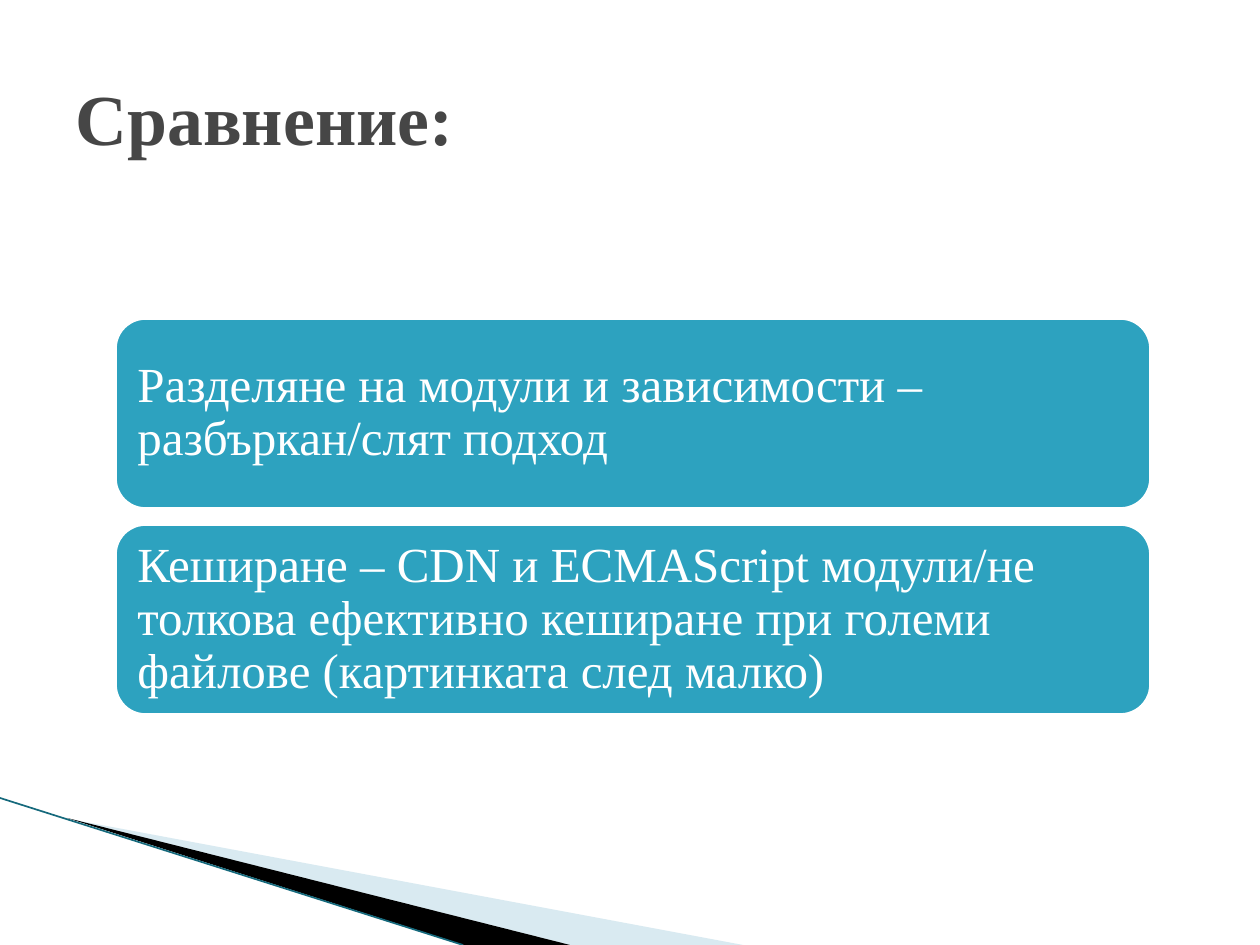
from dataclasses import dataclass

from lxml.etree import SubElement
from pptx import Presentation
from pptx.dml.color import RGBColor
from pptx.enum.shapes import MSO_CONNECTOR as Connector, MSO_SHAPE as Shape
from pptx.enum.text import MSO_ANCHOR as Anchor, MSO_AUTO_SIZE as AutoSize, PP_ALIGN as Align
from pptx.oxml.ns import qn
from pptx.util import Emu, Pt

SCALE = 914400 / 126


@dataclass(frozen=True)
class Theme:
    font: str = "Times New Roman"
    title_size: float = 41
    card_size: float = 28
    title: str = "464646"
    card: str = "2DA2BF"
    white: str = "FFFFFF"
    pale: str = "A0CBDC"
    black: str = "000000"
    edge: str = "15697C"


THEME = Theme()
CARDS = (
    "Разделяне на модули и зависимости – разбъркан/слят подход",
    "Кеширане – CDN и ECMAScript модули/не толкова ефективно кеширане "
    "при големи файлове (картинката след малко)",
)


def px(length):
    return Emu(round(length * SCALE))


def color(code):
    return RGBColor.from_string(code)


def write(frame, text, size, code, bold=False):
    frame.word_wrap = True
    frame.auto_size = AutoSize.NONE
    frame.vertical_anchor = Anchor.MIDDLE
    para = frame.paragraphs[0]
    para.alignment = Align.LEFT
    span = para.add_run()
    span.text = text
    span.font.name = THEME.font
    span.font.size = Pt(size)
    span.font.bold = bold
    span.font.color.rgb = color(code)
    return para


def set_title(page, text):
    box = page.shapes.title
    box.left, box.top, box.width, box.height = map(px, (63, 38, 1134, 157))
    write(box.text_frame, text, THEME.title_size, THEME.title, bold=True)


def add_card(page, text, top):
    box = page.shapes.add_shape(Shape.ROUNDED_RECTANGLE, px(113), px(top), px(1040), px(195))
    box.shadow.inherit = False
    box.fill.solid()
    box.fill.fore_color.rgb = color(THEME.card)
    box.line.color.rgb = color(THEME.white)
    box.line.width = Pt(4.33)
    frame = box.text_frame
    frame.margin_left = frame.margin_right = px(15)
    frame.margin_top = frame.margin_bottom = px(15)
    para = write(frame, text, THEME.card_size, THEME.white)
    para.line_spacing = 0.9


def add_wedge(page, points, code, opacity=100):
    builder = page.shapes.build_freeform(*points[0], scale=SCALE)
    builder.add_line_segments(points[1:], close=True)
    wedge = builder.convert_to_shape()
    wedge.shadow.inherit = False
    wedge.line.fill.background()
    wedge.fill.solid()
    wedge.fill.fore_color.rgb = color(code)
    if opacity < 100:
        fill_color = wedge.fill._xPr.find(qn("a:solidFill"))[0]
        SubElement(fill_color, qn("a:alpha"), val=str(opacity * 1000))


def add_edge(page, start, end):
    edge = page.shapes.add_connector(Connector.STRAIGHT, *map(px, start + end))
    edge.line.color.rgb = color(THEME.edge)
    edge.line.width = Pt(0.95)
    SubElement(edge._element.spPr, qn("a:effectLst"))


def main():
    deck = Presentation()
    deck.slide_width, deck.slide_height = px(1260), px(945)
    page = deck.slides.add_slide(deck.slide_layouts[5])
    add_wedge(page, ((69, 819), (743, 945), (570, 945)), THEME.pale, opacity=40)
    add_wedge(page, ((67, 818), (570, 945), (464, 945)), THEME.black)
    add_edge(page, (0, 798), (463, 945))
    set_title(page, "Сравнение:")
    for index, text in enumerate(CARDS):
        add_card(page, text, 316 + index * 206)
    deck.save("out.pptx")


if __name__ == "__main__":
    main()
